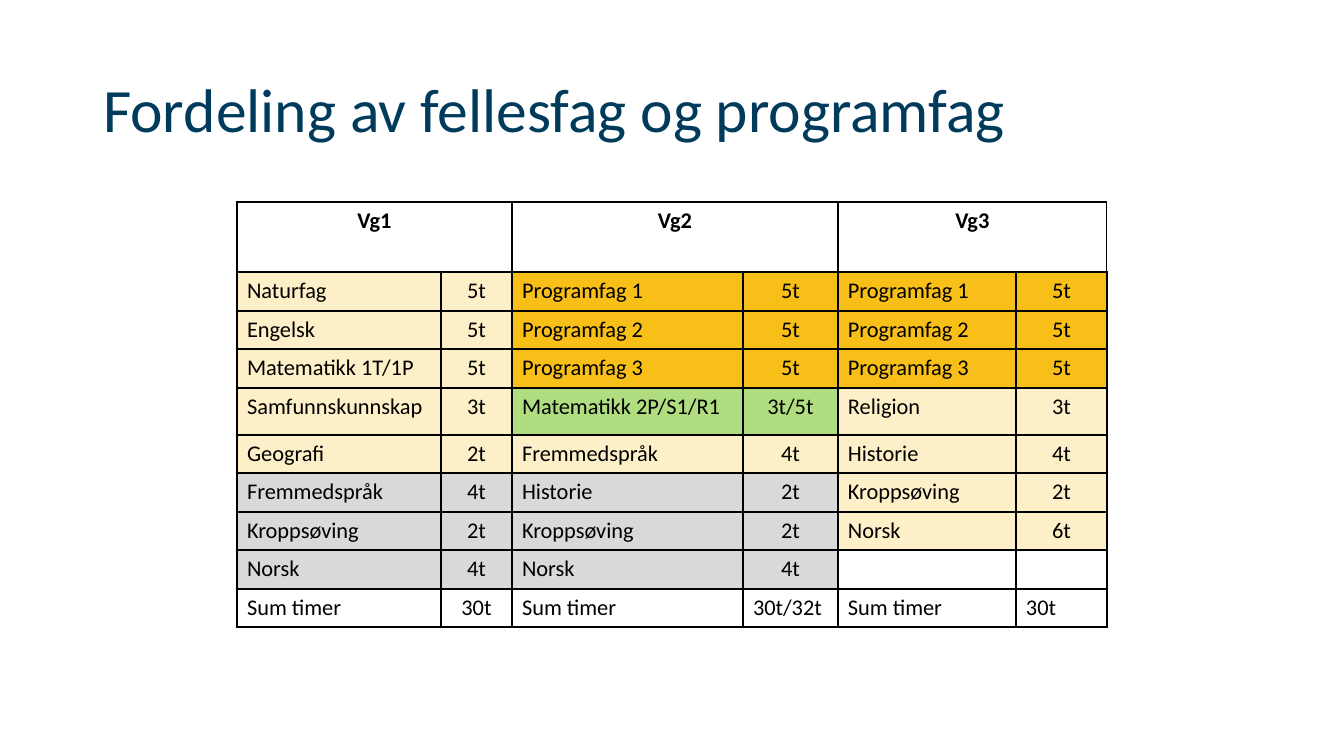
from typing import NamedTuple

from lxml import etree
from pptx import Presentation
from pptx.dml.color import RGBColor
from pptx.enum.text import MSO_ANCHOR, MSO_AUTO_SIZE, PP_ALIGN
from pptx.oxml.ns import qn
from pptx.table import Table, _Cell
from pptx.util import Emu, Pt

LEFT, CENTER = PP_ALIGN.LEFT, PP_ALIGN.CENTER
MIDDLE = MSO_ANCHOR.MIDDLE
NO_FIT = MSO_AUTO_SIZE.NONE

FONT = "Calibri"
COLORS = {
    "title": "003B5C",
    "ink": "000000",
    "cream": "FDEFC7",
    "gold": "F8BF19",
    "green": "B0DD7F",
    "gray": "D9D9D9",
}
THIN, MID, THICK = 1, 1.37, 2.05
WIDTHS = (204, 71, 231, 95, 178, 91)
HEIGHTS = (70, 39, 38, 39, 47, 38, 39, 38, 39, 38)


class Entry(NamedTuple):
    subject: str
    hours: str
    tone: str = ""
    align: PP_ALIGN = CENTER


class Year(NamedTuple):
    name: str
    entries: tuple[Entry, ...]


PROGRAM = tuple(Entry(f"Programfag {n}", "5t", "gold") for n in (1, 2, 3))
YEARS = (
    Year("Vg1", (
        Entry("Naturfag", "5t", "cream"),
        Entry("Engelsk", "5t", "cream"),
        Entry("Matematikk 1T/1P", "5t", "cream"),
        Entry("Samfunnskunnskap", "3t", "cream"),
        Entry("Geografi", "2t", "cream"),
        Entry("Fremmedspråk", "4t", "gray"),
        Entry("Kroppsøving", "2t", "gray"),
        Entry("Norsk", "4t", "gray"),
        Entry("Sum timer", "30t"),
    )),
    Year("Vg2", PROGRAM + (
        Entry("Matematikk 2P/S1/R1", "3t/5t", "green"),
        Entry("Fremmedspråk", "4t", "cream"),
        Entry("Historie", "2t", "gray"),
        Entry("Kroppsøving", "2t", "gray"),
        Entry("Norsk", "4t", "gray"),
        Entry("Sum timer", "30t/32t", align=LEFT),
    )),
    Year("Vg3", PROGRAM + (
        Entry("Religion", "3t", "cream"),
        Entry("Historie", "4t", "cream"),
        Entry("Kroppsøving", "2t", "cream"),
        Entry("Norsk", "6t", "cream"),
        Entry("", ""),
        Entry("Sum timer", "30t", align=LEFT),
    )),
)


def px(count: int) -> Emu:
    return Emu(round(count * 914400 / 100.8))


def color(name: str) -> RGBColor:
    return RGBColor.from_string(COLORS[name])


def upright(row: int, edge: int) -> float:
    """Width of a vertical grid line beside the given row."""
    if row == 0 and edge in (0, len(WIDTHS)):
        return THIN
    return MID if edge % 2 else THICK


def level(edge: int) -> float:
    """Width of a horizontal grid line."""
    return {0: THIN, 1: THICK}.get(edge, MID)


def frame(cell: _Cell, row: int, col: int, span: int) -> None:
    sides = {
        "L": upright(row, col),
        "R": upright(row, col + span),
        "T": level(row),
        "B": level(row + 1),
    }
    props = cell._tc.get_or_add_tcPr()
    for side, width in sides.items():
        line = etree.SubElement(props, qn(f"a:ln{side}"), w=str(Pt(width)))
        fill = etree.SubElement(line, qn("a:solidFill"))
        etree.SubElement(fill, qn("a:srgbClr"), val=COLORS["ink"])


def put(table: Table, row: int, col: int, text: str, tone: str = "",
        align: PP_ALIGN = LEFT, span: int = 1) -> None:
    """Write, frame and fill one cell."""
    cell = table.cell(row, col)
    if span > 1:
        cell.merge(table.cell(row, col + span - 1))
    frame(cell, row, col, span)
    if tone:
        cell.fill.solid()
        cell.fill.fore_color.rgb = color(tone)
    else:
        cell.fill.background()
    cell.text = text
    para = cell.text_frame.paragraphs[0]
    para.alignment = align
    font = para.font
    font.name, font.size, font.bold = FONT, Pt(16), row == 0
    font.color.rgb = color("ink")


def main() -> None:
    deck = Presentation()
    deck.slide_width, deck.slide_height = px(1344), px(756)
    slide = deck.slides.add_slide(deck.slide_layouts[5])

    title = slide.shapes.title
    title.left, title.top = px(93), px(40)
    title.width, title.height = px(1159), px(146)
    body = title.text_frame
    body.text = "Fordeling av fellesfag og programfag"
    body.vertical_anchor, body.auto_size = MIDDLE, NO_FIT
    head = body.paragraphs[0]
    head.alignment, head.line_spacing = LEFT, 0.9
    head.font.name, head.font.size = FONT, Pt(44)
    head.font.color.rgb = color("title")

    table = slide.shapes.add_table(
        len(HEIGHTS), len(WIDTHS), px(237), px(202),
        px(sum(WIDTHS)), px(sum(HEIGHTS))).table
    table.first_row = table.horz_banding = False
    for column, width in zip(table.columns, WIDTHS):
        column.width = px(width)
    for line, height in zip(table.rows, HEIGHTS):
        line.height = px(height)

    for index, year in enumerate(YEARS):
        col = 2 * index
        put(table, 0, col, year.name, align=CENTER, span=2)
        for row, entry in enumerate(year.entries, 1):
            put(table, row, col, entry.subject, entry.tone)
            put(table, row, col + 1, entry.hours, entry.tone, entry.align)

    deck.save("out.pptx")


if __name__ == "__main__":
    main()
